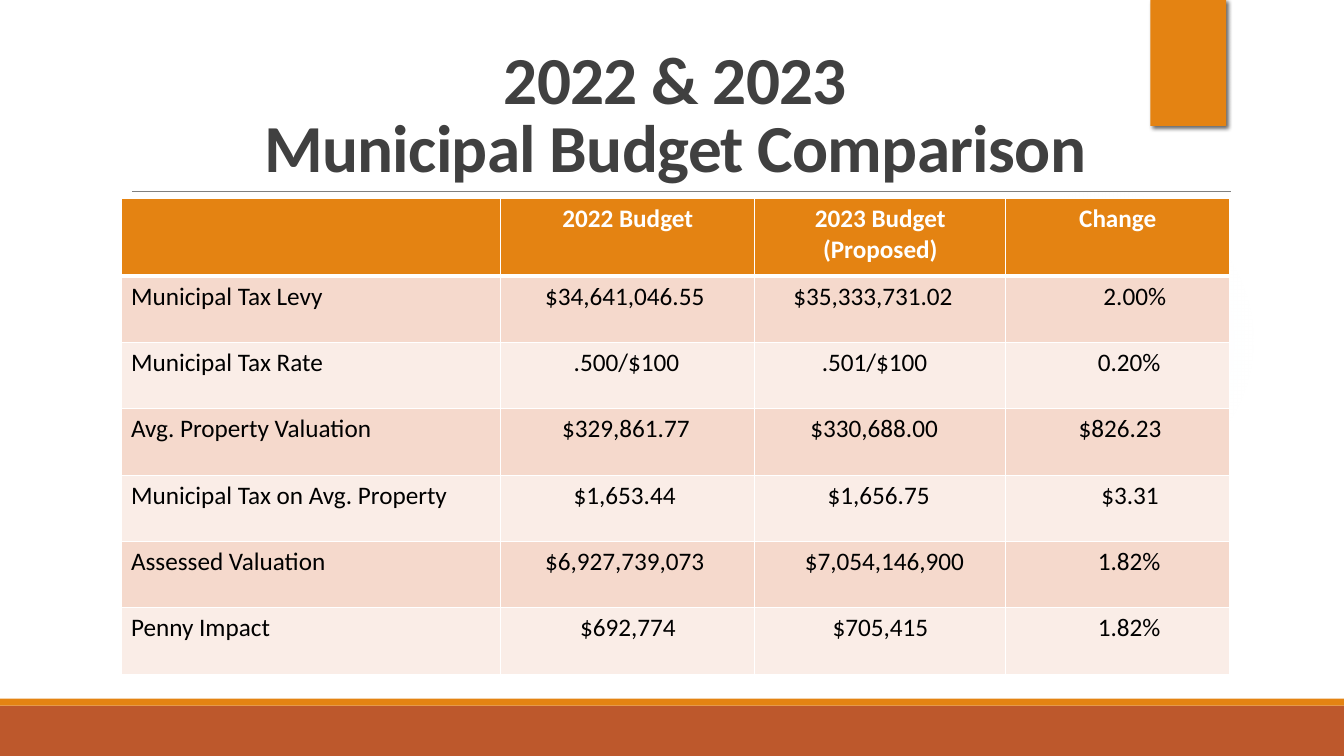
from dataclasses import dataclass

from lxml.etree import SubElement
from pptx import Presentation
from pptx.dml.color import RGBColor as Rgb
from pptx.enum.shapes import MSO_CONNECTOR as Connector, MSO_SHAPE as Preset
from pptx.enum.text import MSO_ANCHOR as Anchor, MSO_AUTO_SIZE as AutoSize, PP_ALIGN as Align
from pptx.oxml import parse_xml
from pptx.oxml.ns import qn
from pptx.util import Pt

COLORS = {
    "rust": "BD582C", "orange": "E48312", "rule": "808080", "glow": "E0EBF2",
    "title": "404040", "white": "FFFFFF", "black": "000000",
    "band_dark": "F5D9CC", "band_light": "FAEDE7",
}
DRAWING_NS = 'xmlns:a="http://schemas.openxmlformats.org/drawingml/2006/main"'
GLOW_STOPS = ((0, 7), (36, 6), (69, 0))
TITLE_FORMAT = {"name": "Calibri", "size": Pt(48), "bold": True}
HEADER_FORMAT = {"name": "Calibri", "size": Pt(18), "bold": True}
BODY_FORMAT = {**HEADER_FORMAT, "bold": False}
CELL_MARGIN = 7.2
COLUMN_WIDTHS = (271.4, 181.4, 179.3, 159.9)
HEADER_HEIGHT, BODY_HEIGHT = 55.4, 47.4


@dataclass(frozen=True)
class Block:
    """A filled decoration, with lengths in points."""
    preset: Preset
    left: float
    top: float
    width: float
    height: float
    color: str


@dataclass(frozen=True)
class Entry:
    """The text of a table cell with its alignment and indent in points."""
    text: str
    indent: float = 0
    align: Align = Align.LEFT


BOTTOM_BAND = Block(Preset.RECTANGLE, 0, 504, 960, 36, "rust")
BOTTOM_STRIPE = Block(Preset.RECTANGLE, 0, 499, 960, 5, "orange")
GLOW = Block(Preset.OVAL, 677.5, 131.8, 221.8, 221.8, "glow")
BOOKMARK = Block(Preset.RECTANGLE, 821.8, 0, 54, 90, "orange")


def centered(text: str, indent: float = 0) -> Entry:
    """Return an entry centred in its cell."""
    return Entry(text, indent, Align.CENTER)


ENTRIES = (
    (centered(""), centered("2022 Budget"), centered("2023 Budget\n(Proposed)"), centered("Change")),
    (Entry("Municipal Tax Levy"), Entry("$34,641,046.55", 24.4),
     Entry("$35,333,731.02", 20.3), centered("2.00%", 24.4)),
    (Entry("Municipal Tax Rate"), Entry(".500/$100", 44.8),
     Entry(".501/$100", 40.7), centered("0.20%", 16.3)),
    (Entry("Avg. Property Valuation"), Entry("$329,861.77", 36.6),
     Entry("$330,688.00", 32.5), Entry("$826.23", 44.8)),
    (Entry("Municipal Tax on Avg. Property"), Entry("$1,653.44", 44.8),
     Entry("$1,656.75", 44.8), Entry("$3.31", 61)),
    (Entry("Assessed Valuation"), Entry("$6,927,739,073", 24.4),
     Entry("$7,054,146,900", 28.5), centered("1.82%", 16.3)),
    (Entry("Penny Impact"), centered("$692,774"), centered("$705,415"), centered("1.82%", 16.3)),
)


def rgb(color: str) -> Rgb:
    """Return the named colour."""
    return Rgb.from_string(COLORS[color])


def format_font(font, settings: dict, color: str) -> None:
    """Apply the format values and colour to a font."""
    for attribute, value in settings.items():
        setattr(font, attribute, value)
    font.color.rgb = rgb(color)


def draw_block(slide, block: Block):
    """Draw a decoration and return its shape."""
    shape = slide.shapes.add_shape(
        block.preset, Pt(block.left), Pt(block.top), Pt(block.width), Pt(block.height))
    shape.shadow.inherit = False
    shape.fill.solid()
    shape.fill.fore_color.rgb = rgb(block.color)
    shape.line.fill.background()
    return shape


def fade_glow(shape) -> None:
    """Turn the solid fill into a faint radial gradient."""
    stops = "".join(
        f'<a:gs pos="{position * 1000}"><a:srgbClr val="{COLORS["glow"]}">'
        f'<a:alpha val="{alpha * 1000}"/></a:srgbClr></a:gs>' for position, alpha in GLOW_STOPS)
    gradient = parse_xml(
        f'<a:gradFill {DRAWING_NS}><a:gsLst>{stops}</a:gsLst><a:path path="circle">'
        '<a:fillToRect l="50000" t="50000" r="50000" b="50000"/></a:path></a:gradFill>')
    properties = shape.element.spPr
    properties.replace(properties.find(qn("a:solidFill")), gradient)


def cast_shadow(shape) -> None:
    """Add a diagonal drop shadow."""
    shape.element.spPr.find(qn("a:effectLst")).append(parse_xml(
        f'<a:outerShdw {DRAWING_NS} blurRad="{Pt(3)}" dist="{Pt(2)}" dir="2700000" algn="tl" '
        f'rotWithShape="0"><a:srgbClr val="{COLORS["black"]}"><a:alpha val="60000"/>'
        '</a:srgbClr></a:outerShdw>'))


def draw_rule(slide) -> None:
    """Draw the thin line under the title."""
    rule = slide.shapes.add_connector(
        Connector.STRAIGHT, Pt(94.3), Pt(136.8), Pt(879.1), Pt(136.8))
    rule.line.color.rgb = rgb("rule")
    rule.line.width = Pt(0.5)
    SubElement(rule.element.spPr, qn("a:effectLst"))


def write_title(slide) -> None:
    """Place and format the title."""
    title = slide.shapes.title
    title.left, title.top, title.width, title.height = Pt(86.4), Pt(22.3), Pt(792), Pt(114.5)
    frame = title.text_frame
    frame.text = "2022 & 2023\vMunicipal Budget Comparison"
    frame.word_wrap = True
    frame.auto_size = AutoSize.NONE
    frame.vertical_anchor = Anchor.BOTTOM
    paragraph = frame.paragraphs[0]
    paragraph.alignment = Align.CENTER
    paragraph.line_spacing = 0.85
    for run in paragraph.runs:
        format_font(run.font, TITLE_FORMAT, "title")
        run.font._element.set("spc", "-50")


def border_cell(cell, top: float, bottom: float) -> None:
    """Draw white borders round a cell, with widths in points."""
    for side, width in (("L", 1), ("R", 1), ("T", top), ("B", bottom)):
        cell._tc.get_or_add_tcPr().append(parse_xml(
            f'<a:ln{side} {DRAWING_NS} w="{Pt(width)}"><a:solidFill>'
            f'<a:srgbClr val="{COLORS["white"]}"/></a:solidFill></a:ln{side}>'))


def fill_cell(cell, entry: Entry, row: int) -> None:
    """Write and format one cell by its row."""
    header = row == 0
    border_cell(cell, 3 if row == 1 else 1, 3 if header else 1)
    cell.fill.solid()
    cell.fill.fore_color.rgb = rgb(
        "orange" if header else "band_dark" if row % 2 else "band_light")
    cell.margin_left = Pt(CELL_MARGIN + entry.indent)
    cell.text = entry.text
    for paragraph in cell.text_frame.paragraphs:
        paragraph.alignment = entry.align
        for run in paragraph.runs:
            format_font(run.font, HEADER_FORMAT if header else BODY_FORMAT,
                        "white" if header else "black")


def draw_table(slide) -> None:
    """Draw the budget comparison table."""
    heights = (HEADER_HEIGHT,) + (BODY_HEIGHT,) * (len(ENTRIES) - 1)
    budget = slide.shapes.add_table(
        len(ENTRIES), len(COLUMN_WIDTHS), Pt(86.4), Pt(141.8),
        Pt(sum(COLUMN_WIDTHS)), Pt(sum(heights))).table
    for column, width in zip(budget.columns, COLUMN_WIDTHS):
        column.width = Pt(width)
    for row, (entries, height) in enumerate(zip(ENTRIES, heights)):
        budget.rows[row].height = Pt(height)
        for column, entry in enumerate(entries):
            fill_cell(budget.cell(row, column), entry, row)


def main() -> None:
    """Build and save the slide."""
    deck = Presentation()
    deck.slide_width, deck.slide_height = Pt(960), Pt(540)
    slide = deck.slides.add_slide(deck.slide_layouts[5])
    draw_block(slide, BOTTOM_BAND)
    draw_block(slide, BOTTOM_STRIPE)
    draw_rule(slide)
    fade_glow(draw_block(slide, GLOW))
    cast_shadow(draw_block(slide, BOOKMARK))
    write_title(slide)
    draw_table(slide)
    deck.save("out.pptx")


if __name__ == "__main__":
    main()
